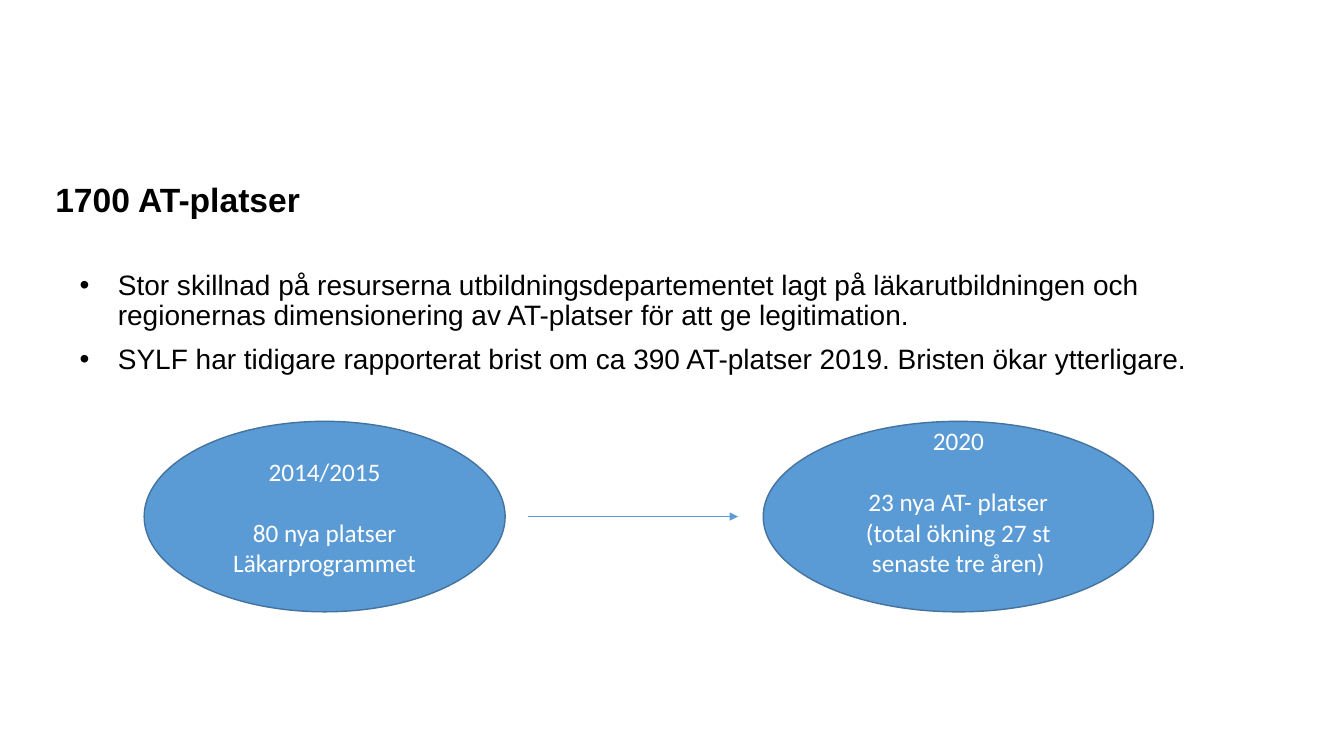
import pptx
import pptx.util
import pptx.dml.color
import pptx.enum.shapes
import pptx.enum.text
import lxml.etree
from pptx.util import Inches, Pt
from pptx.oxml.ns import qn

TITLE = "1700 AT-platser"
POINTS = [
    "Stor skillnad på resurserna utbildningsdepartementet lagt på läkarutbildningen och "
    "regionernas dimensionering av AT-platser för att ge legitimation.",
    "SYLF har tidigare rapporterat brist om ca 390 AT-platser 2019. Bristen ökar ytterligare.",
]
# left, width, bottom inset, year, lines below the year
STAGES = [
    (1.43, 3.58, 0.05, "2014/2015", ["80 nya platser", "Läkarprogrammet"]),
    (7.57, 3.87, 0.35, "2020", ["23 nya AT- platser", "(total ökning 27 st senaste tre åren)"]),
]
STAGE_TOP, STAGE_HEIGHT = 4.18, 1.89
ARROW_START, ARROW_END = 5.24, 7.32
YEAR_GAP = Pt(22)
COLORS = {"text": "000000", "stage": "5B9BD5", "outline": "43739E", "stage_text": "FFFFFF"}


def color(name):
    return pptx.dml.color.RGBColor.from_string(COLORS[name])


def set_font(paragraph, name, size, color_name, bold=False):
    font = paragraph.font
    font.name, font.size, font.bold = name, Pt(size), bold
    font.color.rgb = color(color_name)


def add_text(slide, left, top, width, height, lines):
    """Add a wrapping text box and return its paragraphs."""
    box = slide.shapes.add_textbox(Inches(left), Inches(top), Inches(width), Inches(height))
    box.text_frame.word_wrap = True
    box.text_frame.text = "\n".join(lines)
    for paragraph in box.text_frame.paragraphs:
        paragraph.line_spacing = 0.9
    return box.text_frame.paragraphs


def add_bullet(paragraph, indent):
    properties = paragraph._p.get_or_add_pPr()
    properties.set("marL", str(Inches(indent)))
    properties.set("indent", str(-Inches(indent)))
    lxml.etree.SubElement(properties, qn("a:buFont")).set("typeface", "Arial")
    lxml.etree.SubElement(properties, qn("a:buChar")).set("char", "•")


def add_stage(slide, left, width, bottom_inset, year, details):
    stage = slide.shapes.add_shape(
        pptx.enum.shapes.MSO_SHAPE.OVAL,
        Inches(left), Inches(STAGE_TOP), Inches(width), Inches(STAGE_HEIGHT))
    stage.shadow.inherit = False
    stage.fill.solid()
    stage.fill.fore_color.rgb = color("stage")
    stage.line.color.rgb = color("outline")
    stage.line.width = Pt(1)
    frame = stage.text_frame
    frame.word_wrap = True
    frame.vertical_anchor = pptx.enum.text.MSO_ANCHOR.MIDDLE
    frame.margin_bottom = Inches(bottom_inset)
    frame.text = "\n".join([year] + details)
    for paragraph in frame.paragraphs:
        paragraph.alignment = pptx.enum.text.PP_ALIGN.CENTER
        set_font(paragraph, "Calibri", 18, "stage_text")
    frame.paragraphs[0].space_after = YEAR_GAP


def add_arrow(slide):
    middle = Inches(STAGE_TOP + STAGE_HEIGHT / 2)
    arrow = slide.shapes.add_connector(
        pptx.enum.shapes.MSO_CONNECTOR.STRAIGHT,
        Inches(ARROW_START), middle, Inches(ARROW_END), middle)
    arrow.line.color.rgb = color("stage")
    arrow.line.width = Pt(0.5)
    lxml.etree.SubElement(arrow.line._get_or_add_ln(), qn("a:tailEnd")).set("type", "triangle")
    lxml.etree.SubElement(arrow._element.spPr, qn("a:effectLst"))


def main():
    deck = pptx.Presentation()
    deck.slide_width, deck.slide_height = Inches(13.33), Inches(7.5)
    slide = deck.slides.add_slide(deck.slide_layouts[6])

    heading = add_text(slide, 0.45, 1.77, 11.97, 0.7, [TITLE])[0]
    set_font(heading, "Arial", 24, "text", bold=True)

    for number, point in enumerate(add_text(slide, 0.69, 2.64, 11.72, 1.4, POINTS)):
        if number:
            point.space_before = Pt(10)
        add_bullet(point, 0.38)
        set_font(point, "Arial", 20, "text")

    for stage in STAGES:
        add_stage(slide, *stage)
    add_arrow(slide)
    deck.save("out.pptx")


if __name__ == "__main__":
    main()
